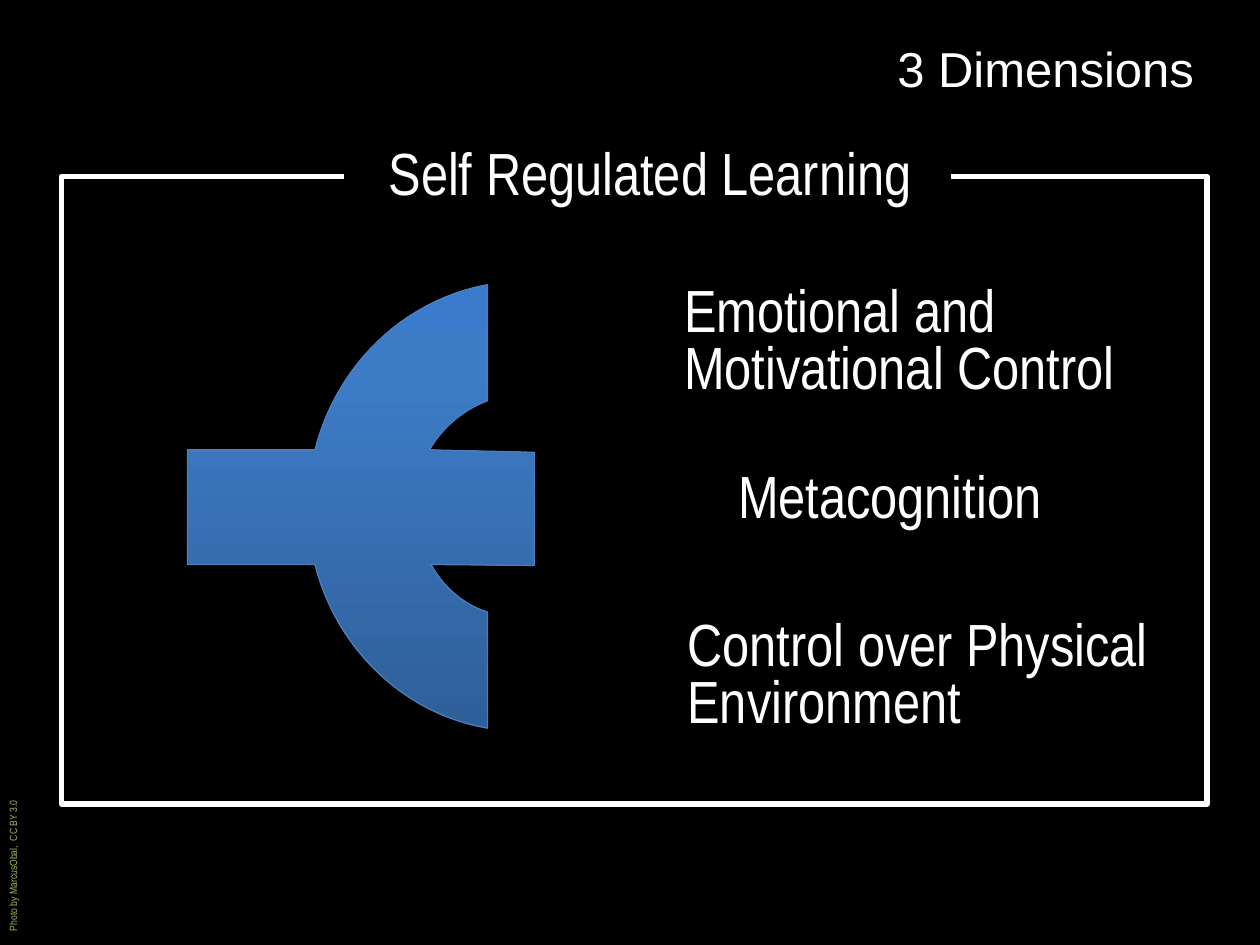
from copy import deepcopy
from dataclasses import dataclass

from pptx import Presentation
from pptx.dml.color import RGBColor as Rgb
from pptx.enum.text import MSO_ANCHOR as Anchor, MSO_AUTO_SIZE as Fit, PP_ALIGN as Align
from pptx.util import Cm, Pt


@dataclass(frozen=True)
class Theme:
    back: str = "000000"
    text: str = "FFFFFF"
    credit: str = "9BBB59"
    edge: str = "4B7EBC"
    blend: tuple = ((0, "2F5F99"), (0.8, "3D7CC7"), (1, "3A7CCB"))
    head: str = "Arial"
    body: str = "Arial Narrow"
    title: int = 28
    label: int = 34
    small: int = 6


def color(code):
    return Rgb.from_string(code)


def curve(a, b, c, d, steps=24):
    """Points along a cubic Bezier from a to d."""
    def mix(t, i):
        u = 1 - t
        return u**3 * a[i] + 3 * u * u * t * b[i] + 3 * u * t * t * c[i] + t**3 * d[i]
    return [(mix(n / steps, 0), mix(n / steps, 1)) for n in range(steps + 1)]


class Deck:
    def __init__(self, theme):
        self.theme = theme
        self.prs = Presentation()
        self.prs.slide_width, self.prs.slide_height = Cm(25.4), Cm(19.05)
        self.slide = self.prs.slides.add_slide(self.prs.slide_layouts[6])
        fill = self.slide.background.fill
        fill.solid()
        fill.fore_color.rgb = color(theme.back)

    def text(self, words, box, size, font=None, tint=None, align=Align.LEFT,
             anchor=Anchor.TOP, gap=None, turn=0):
        shape = self.slide.shapes.add_textbox(*map(Cm, box))
        shape.rotation = turn
        frame = shape.text_frame
        frame.word_wrap = True
        frame.auto_size = Fit.SHAPE_TO_FIT_TEXT
        frame.vertical_anchor = anchor
        frame.text = words
        for par in frame.paragraphs:
            par.alignment = align
            par.line_spacing = gap
            for run in par.runs:
                run.font.size = Pt(size)
                run.font.name = font or self.theme.body
                run.font.color.rgb = color(tint or self.theme.text)

    def label(self, words, box, **style):
        self.text(words, box, self.theme.label, gap=0.8, **style)

    def outline(self, points, tint, width, close):
        spots = [(Cm(x), Cm(y)) for x, y in points]
        pen = self.slide.shapes.build_freeform(*spots[0])
        pen.add_line_segments(spots[1:], close=close)
        shape = pen.convert_to_shape()
        shape.shadow.inherit = False
        shape.line.color.rgb = color(tint)
        shape.line.width = Pt(width)
        shape.fill.background()
        return shape

    def blend(self, shape):
        """Fill with the theme's gradient, first stop at the bottom."""
        fill = shape.fill
        fill.gradient()
        fill.gradient_angle = 90
        stops = shape.element.spPr.gradFill.gsLst
        stops.append(deepcopy(stops[-1]))
        for stop, (place, code) in zip(fill.gradient_stops, self.theme.blend):
            stop.color.rgb = color(code)
            stop.position = place


def main():
    theme = Theme()
    deck = Deck(theme)

    fork = [
        (9.83, 5.74),
        *curve((9.83, 8.08), (9.35, 8.26), (8.92, 8.61), (8.66, 9.07)),
        (10.77, 9.12), (10.77, 11.4),
        *curve((8.69, 11.38), (8.94, 11.84), (9.35, 12.19), (9.83, 12.34)),
        *curve((9.83, 14.68), (8.15, 14.4), (6.78, 13.08), (6.35, 11.38)),
        (3.78, 11.38), (3.78, 9.07),
        *curve((6.35, 9.07), (6.78, 7.37), (8.13, 6.05), (9.83, 5.74)),
    ]
    deck.blend(deck.outline(fork, theme.edge, 0.75, close=True))

    deck.text("3 Dimensions ", (17.15, 0.66, 7.44, 1.45), theme.title,
              font=theme.head, align=Align.RIGHT)
    deck.text("Photo by MarcusObal,  CC BY 3.0", (-2.62, 15.88, 5.77, 0.51),
              theme.small, tint=theme.credit, turn=270)
    deck.label("Control over Physical\vEnvironment", (13.61, 12.37, 9.93, 2.59),
               anchor=Anchor.MIDDLE)
    deck.label("Emotional and\nMotivational Control", (13.54, 5.64, 9.93, 2.59),
               anchor=Anchor.MIDDLE)
    deck.label("Metacognition", (14.63, 9.4, 7.7, 1.42))
    deck.label("Self Regulated Learning", (6.96, 2.9, 12.29, 1.42), align=Align.CENTER)

    left, top, right, base = 1.24, 3.56, 24.33, 16.21
    border = [(19.18, top), (right, top), (right, base), (left, base), (left, top), (6.93, top)]
    deck.outline(border, theme.text, 3, close=False)

    deck.prs.save("out.pptx")


if __name__ == "__main__":
    main()
